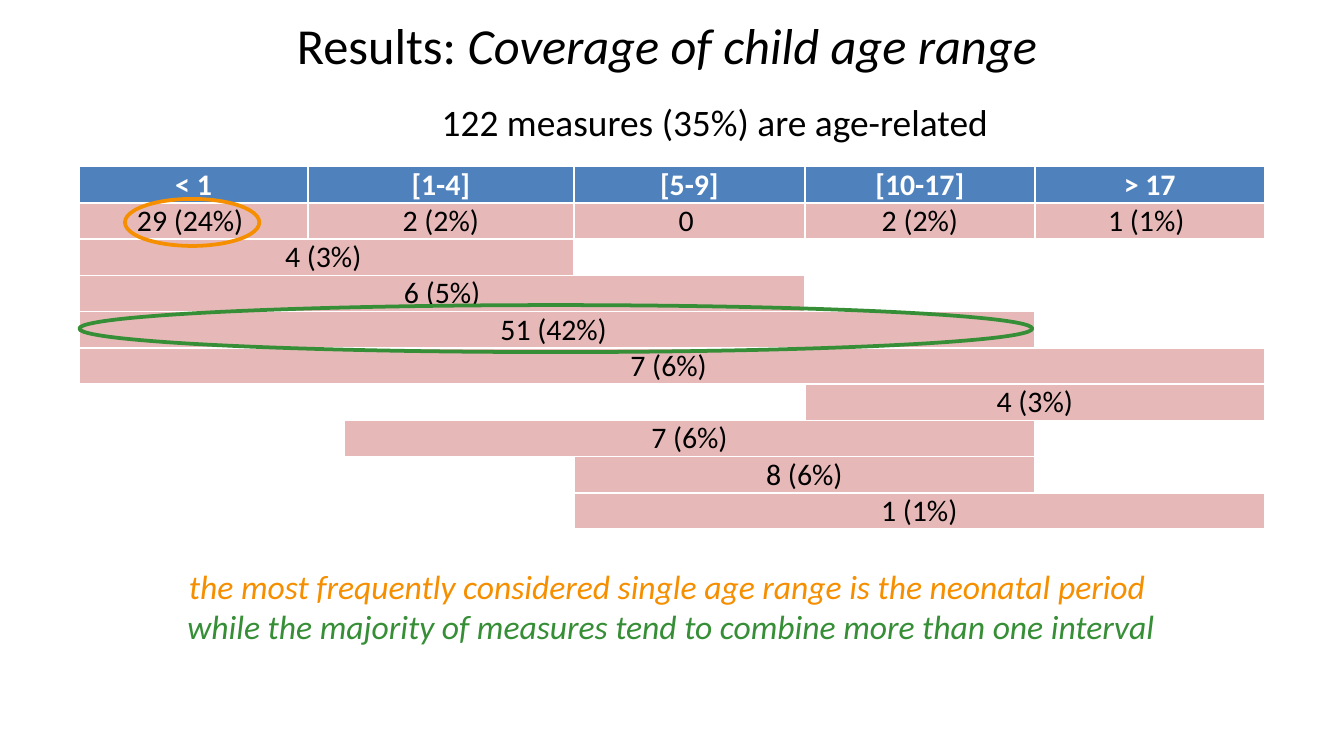
from lxml import etree
from pptx import Presentation
from pptx.dml.color import RGBColor
from pptx.enum import shapes, text
from pptx.oxml import ns
from pptx.util import Inches, Pt

COLORS = {
    "black": "000000", "white": "FFFFFF", "head": "4F81BD",
    "band": "E6B9B8", "orange": "F68F00", "green": "368E36",
}
WIDTHS = [1.7, 0.27, 1.71, 1.72, 1.71, 1.71]
ROW = 0.27

# Each row lists (columns spanned, text); None marks an empty stretch.
ROWS = [
    [(1, "< 1"), (2, "[1-4]"), (1, "[5-9]"), (1, "[10-17]"), (1, "> 17")],
    [(1, "29 (24%) "), (2, "2 (2%)"), (1, "0 "), (1, "2 (2%)"),
     (1, "1 (1%) ")],
    [(3, "4 (3%) "), (3, None)],
    [(4, "6 (5%)"), (2, None)],
    [(5, "51 (42%) "), (1, None)],
    [(6, "7 (6%) ")],
    [(4, None), (2, "4 (3%)")],
    [(2, None), (3, "7 (6%)"), (1, None)],
    [(2, None), (1, None), (2, "8 (6%)"), (1, None)],
    [(2, None), (1, None), (3, "1 (1%)")],
]


def color(name):
    return RGBColor.from_string(COLORS[name])


def style(par, size, hue, bold=False):
    par.alignment = text.PP_ALIGN.CENTER
    font = par.font
    font.name, font.size, font.bold = "Calibri", Pt(size), bold
    font.color.rgb = color(hue)


def add_text(slide, box, size, lines):
    """Add centred lines, each a hue and a list of (text, italic) runs."""
    shape = slide.shapes.add_textbox(*map(Inches, box))
    frame = shape.text_frame
    frame.word_wrap = True
    for i, (hue, runs) in enumerate(lines):
        par = frame.add_paragraph() if i else frame.paragraphs[0]
        style(par, size, hue)
        for words, slant in runs:
            run = par.add_run()
            run.text = words
            run.font.italic = slant
    return shape


def add_edges(cell):
    """Draw a thin white line on all four sides of a cell."""
    props = cell._tc.get_or_add_tcPr()
    for side in ("lnL", "lnR", "lnT", "lnB"):
        line = etree.SubElement(props, ns.qn(f"a:{side}"), w=str(Pt(1)))
        fill = etree.SubElement(line, ns.qn("a:solidFill"))
        etree.SubElement(fill, ns.qn("a:srgbClr"), val=COLORS["white"])


def format_cell(cell, words, head):
    cell.margin_left = cell.margin_right = Inches(0.07)
    cell.margin_top = cell.margin_bottom = 0
    add_edges(cell)
    if words:
        cell.text = words
        cell.fill.solid()
        cell.fill.fore_color.rgb = color("head" if head else "band")
    else:
        cell.fill.background()
    style(cell.text_frame.paragraphs[0], 16, "white" if head else "black", head)


def add_grid(slide, left, top):
    frame = slide.shapes.add_table(
        len(ROWS), len(WIDTHS), Inches(left), Inches(top),
        Inches(sum(WIDTHS)), Inches(ROW * len(ROWS)))
    table = frame.table
    table.horz_banding = False
    for col, width in zip(table.columns, WIDTHS):
        col.width = Inches(width)
    for r, parts in enumerate(ROWS):
        table.rows[r].height = Inches(ROW)
        c = 0
        for span, words in parts:
            for k in range(span):
                format_cell(table.cell(r, c + k), None if k else words, r == 0)
            if span > 1:
                table.cell(r, c).merge(table.cell(r, c + span - 1))
            c += span


def add_ring(slide, box, hue):
    ring = slide.shapes.add_shape(shapes.MSO_SHAPE.OVAL, *map(Inches, box))
    ring.shadow.inherit = False
    ring.fill.background()
    ring.line.color.rgb = color(hue)
    ring.line.width = Pt(2)


def main():
    deck = Presentation()
    deck.slide_width = Inches(10)
    deck.slide_height = deck.slide_width * 9 // 16
    slide = deck.slides.add_slide(deck.slide_layouts[6])

    title = add_text(slide, (0.28, 0.09, 9.45, 0.48), 27, [
        ("black", [("Results: ", False),
                   ("Coverage of child age range ", True)])])
    title.text_frame.vertical_anchor = text.MSO_ANCHOR.MIDDLE
    add_grid(slide, 0.59, 1.24)
    add_text(slide, (0.83, 0.69, 8.98, 0.44), 20, [
        ("black", [("122 measures (35%) are age-related", False)])])
    add_text(slide, (0.45, 4.16, 9.09, 0.71), 18, [
        ("orange", [("the most frequently considered single age range "
                     "is the neonatal period ", True)]),
        ("green", [("while the majority of measures tend to combine "
                    "more than one interval", True)])])
    add_ring(slide, (0.93, 1.48, 1, 0.35), "orange")
    add_ring(slide, (0.59, 2.27, 7.09, 0.35), "green")
    deck.save("out.pptx")


if __name__ == "__main__":
    main()
